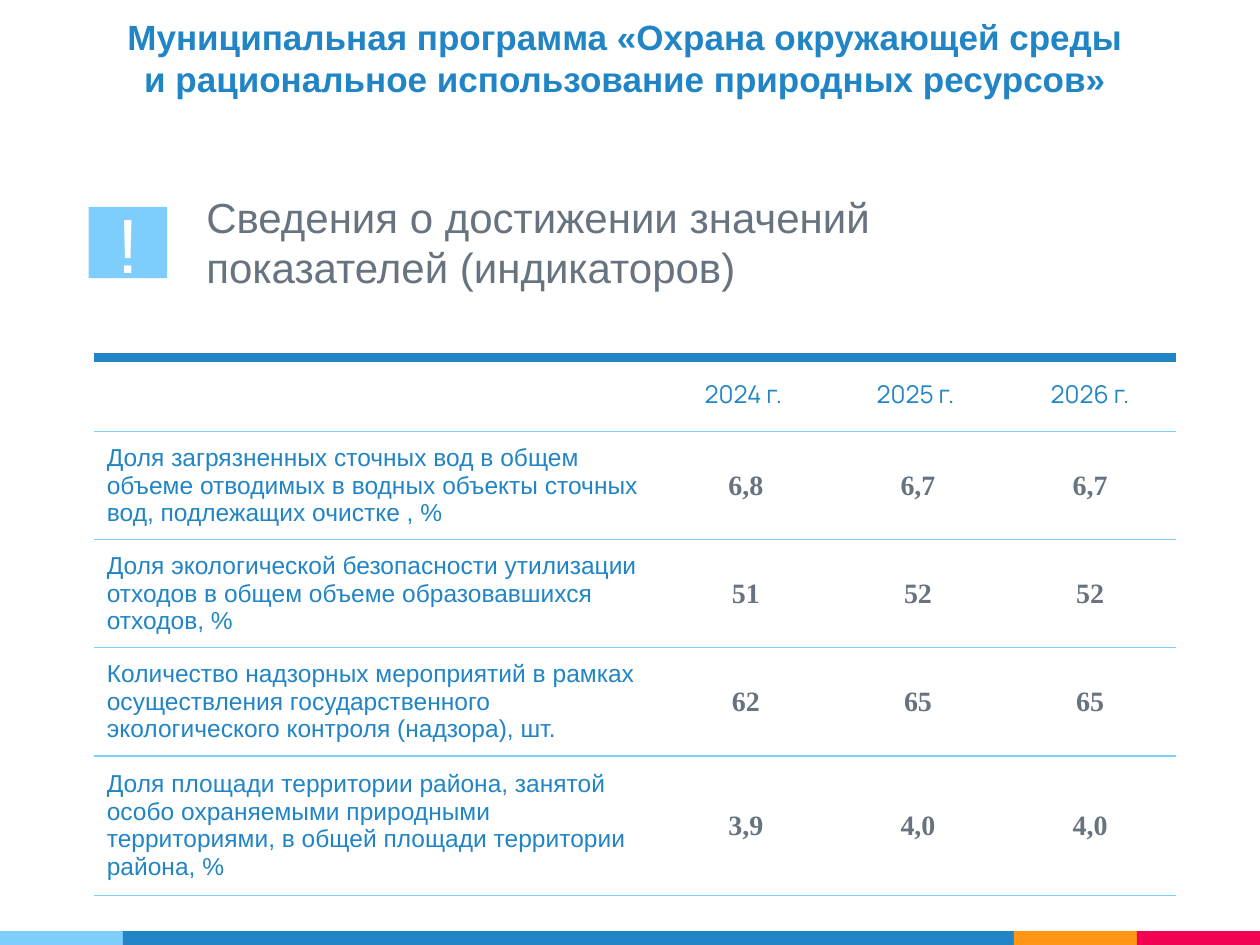
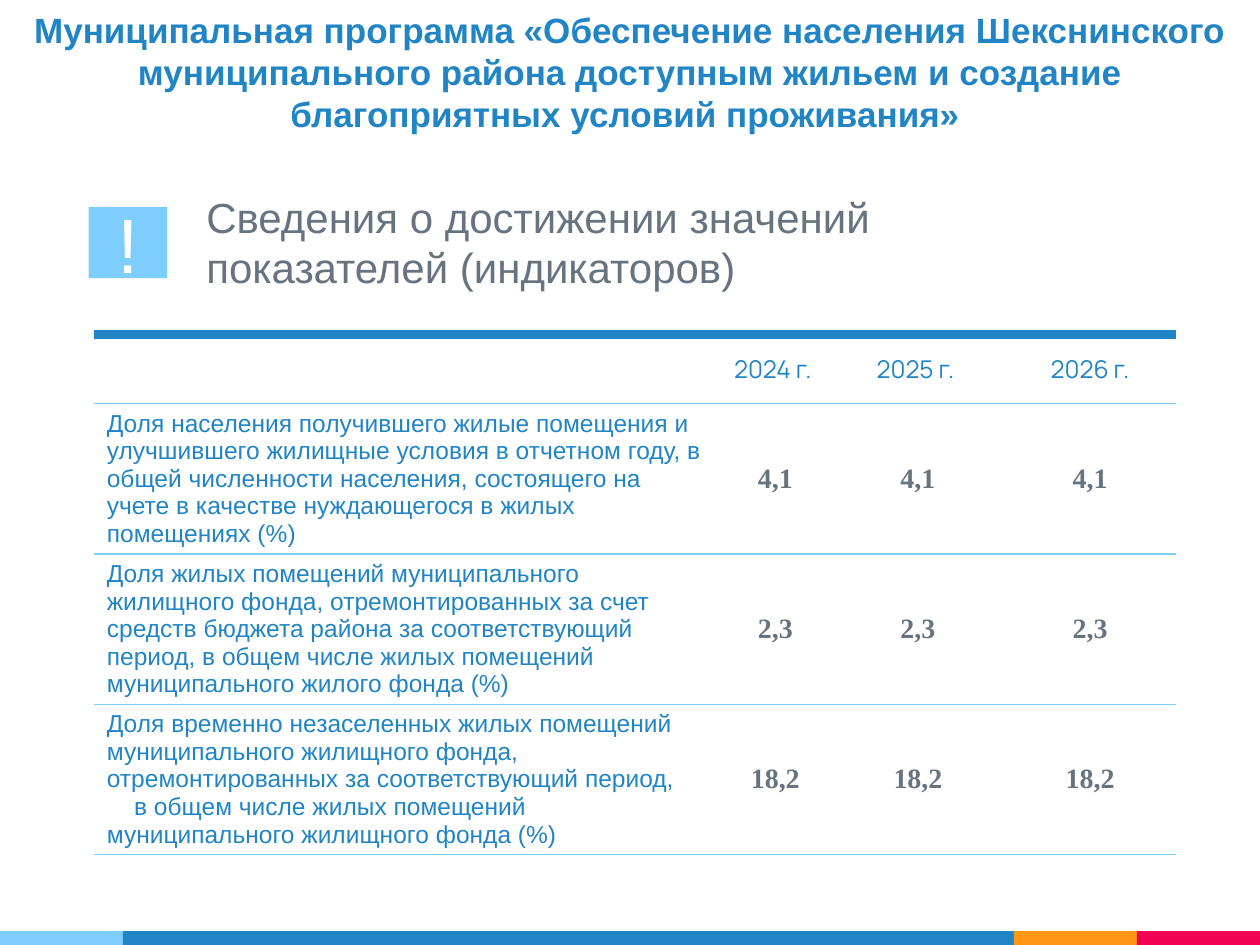
from lxml import etree
from pptx import Presentation
from pptx.dml.color import RGBColor
from pptx.enum.shapes import MSO_SHAPE
from pptx.enum.text import MSO_ANCHOR, MSO_AUTO_SIZE, PP_ALIGN
from pptx.oxml.ns import qn
from pptx.util import Cm, Pt

BLUE = RGBColor(0x21, 0x85, 0xC5)
SKY = RGBColor(0x7E, 0xCE, 0xFD)
ORANGE = RGBColor(0xFF, 0x97, 0x15)
RED = RGBColor(0xF2, 0x02, 0x53)
GREY = RGBColor(0x67, 0x74, 0x80)
WHITE = RGBColor(0xFF, 0xFF, 0xFF)
LEFT, CENTER = PP_ALIGN.LEFT, PP_ALIGN.CENTER
TOP, MIDDLE = MSO_ANCHOR.TOP, MSO_ANCHOR.MIDDLE
RECT = MSO_SHAPE.RECTANGLE
NO_FIT = MSO_AUTO_SIZE.NONE

TITLE_ONLY = 5
WIDTH, HEIGHT = 25.4, 19.05
BAND_HEIGHT = 0.28
BANDS = [(SKY, 2.48), (BLUE, 17.96), (ORANGE, 2.48), (RED, 2.48)]
YEARS = ["2024 г. ", "2025 г. ", "2026 г."]
SUBTITLE = "Сведения о достижении значений показателей (индикаторов)"

ECOLOGY = [
    ("Доля загрязненных сточных вод в общем объеме отводимых в водных объекты "
     "сточных вод, подлежащих очистке , %", "6,8", "6,7", "6,7"),
    ("Доля экологической безопасности утилизации отходов в общем объеме "
     "образовавшихся отходов, %", "51", "52", "52"),
    ("Количество надзорных мероприятий в рамках осуществления государственного "
     "экологического контроля (надзора), шт.", "62", "65", "65"),
    ("Доля площади территории района, занятой особо охраняемыми природными "
     "территориями, в общей площади территории района, %", "3,9", "4,0", "4,0"),
]
HOUSING = [
    ("Доля населения получившего жилые помещения и улучшившего жилищные условия "
     "в отчетном году, в общей численности населения, состоящего на учете "
     "в качестве нуждающегося в жилых помещениях (%)", "4,1", "4,1", "4,1"),
    ("Доля жилых помещений муниципального жилищного фонда, отремонтированных "
     "за счет средств бюджета района за соответствующий период, в общем числе "
     "жилых помещений муниципального жилого фонда (%)", "2,3", "2,3", "2,3"),
    ("Доля временно незаселенных жилых помещений муниципального жилищного фонда, "
     "отремонтированных за соответствующий период,\nв общем числе жилых помещений "
     "муниципального жилищного фонда (%)", "18,2", "18,2", "18,2"),
]


def write(tf, text, size=14, color=BLUE, font="Arial", bold=False, align=LEFT):
    """Fill a text frame; paragraphs after the first get a first-line indent."""
    for i, line in enumerate(text.split("\n")):
        p = tf.add_paragraph() if i else tf.paragraphs[0]
        p.text = line
        p.alignment = align
        if i:
            p._p.get_or_add_pPr().set("indent", str(Cm(0.55)))
        for r in p.runs:
            r.font.size = Pt(size)
            r.font.name = font
            r.font.bold = bold
            r.font.color.rgb = color


def add_rect(s, left, top, width, height, color):
    sp = s.shapes.add_shape(RECT, Cm(left), Cm(top), Cm(width), Cm(height))
    sp.shadow.inherit = False
    sp.fill.solid()
    sp.fill.fore_color.rgb = color
    sp.line.fill.background()
    return sp


def add_bands(s):
    left = 0
    for color, width in BANDS:
        add_rect(s, left, HEIGHT - BAND_HEIGHT, width, BAND_HEIGHT, color)
        left += width


def set_title(s, text, top, height):
    sp = s.shapes.title
    sp.left, sp.top, sp.width, sp.height = Cm(0), Cm(top), Cm(WIDTH), Cm(height)
    tf = sp.text_frame
    tf.auto_size = NO_FIT
    tf.word_wrap = True
    tf.vertical_anchor = TOP
    write(tf, text, size=20, bold=True, align=CENTER)


def add_subtitle(s):
    tf = s.shapes.add_textbox(Cm(3.91), Cm(3.73), Cm(15.34), Cm(2.31)).text_frame
    tf.word_wrap = True
    write(tf, SUBTITLE, size=24, color=GREY)


def add_badge(s):
    tf = add_rect(s, 1.79, 4.17, 1.58, 1.44, SKY).text_frame
    tf.margin_left = tf.margin_right = tf.margin_top = tf.margin_bottom = Cm(0.25)
    tf.vertical_anchor = MIDDLE
    write(tf, "!", size=44, color=WHITE, align=CENTER)


def set_borders(cell, top, bottom):
    """Draw only horizontal borders, each given as (colour, points)."""
    tc_pr = cell._tc.get_or_add_tcPr()
    sides = [("a:lnL", None), ("a:lnR", None), ("a:lnT", top), ("a:lnB", bottom)]
    for i, (tag, border) in enumerate(sides):
        ln = etree.Element(qn(tag))
        if border:
            color, width = border
            ln.set("w", str(Pt(width)))
            fill = etree.SubElement(ln, qn("a:solidFill"))
            etree.SubElement(fill, qn("a:srgbClr")).set("val", str(color))
        else:
            etree.SubElement(ln, qn("a:noFill"))
        tc_pr.insert(i, ln)


def add_indicators(s, rows, top, widths, heights, label_anchor):
    frame = s.shapes.add_table(len(heights), len(widths), Cm(1.9), Cm(top),
                               Cm(sum(widths)), Cm(sum(heights)))
    table = frame.table
    table.first_row = table.horz_banding = False
    for column, width in zip(table.columns, widths):
        column.width = Cm(width)
    for row, height in zip(table.rows, heights):
        row.height = Cm(height)

    thin, thick = (SKY, 0.75), (BLUE, 6)
    for i, values in enumerate([("", *YEARS), *rows]):
        for j, text in enumerate(values):
            cell = table.cell(i, j)
            cell.fill.background()
            set_borders(cell, thin if i else thick, thin)
            cell.vertical_anchor = MIDDLE if j else label_anchor
            if i == 0:
                cell.margin_top = cell.margin_bottom = Cm(0.18)
                write(cell.text_frame, text, font="Manrope", align=CENTER)
            elif j == 0:
                write(cell.text_frame, text)
            else:
                write(cell.text_frame, text, size=16, color=GREY,
                      font="Times New Roman", bold=True, align=CENTER)


def add_program(prs, title, title_top, title_height, **table):
    s = prs.slides.add_slide(prs.slide_layouts[TITLE_ONLY])
    add_bands(s)
    add_indicators(s, **table)
    add_subtitle(s)
    set_title(s, title, title_top, title_height)
    add_badge(s)


def main():
    prs = Presentation()
    prs.slide_width, prs.slide_height = Cm(WIDTH), Cm(HEIGHT)
    add_program(
        prs, "Муниципальная программа «Охрана окружающей среды \v"
        "и рациональное использование природных ресурсов» ", 0.18, 2.2,
        rows=ECOLOGY, top=7.2, widths=[11.4] + [3.47] * 3,
        heights=[1.5] + [2.18] * 3 + [2.81], label_anchor=MIDDLE)
    add_program(
        prs, "Муниципальная программа «Обеспечение населения Шекснинского "
        "муниципального района доступным жильем и создание "
        "благоприятных условий проживания» ", 0.05, 2.57,
        rows=HOUSING, top=6.75, widths=[12.59, 2.28, 3.47, 3.47],
        heights=[1.39] + [3.03] * 3, label_anchor=TOP)
    prs.save("out.pptx")


if __name__ == "__main__":
    main()
